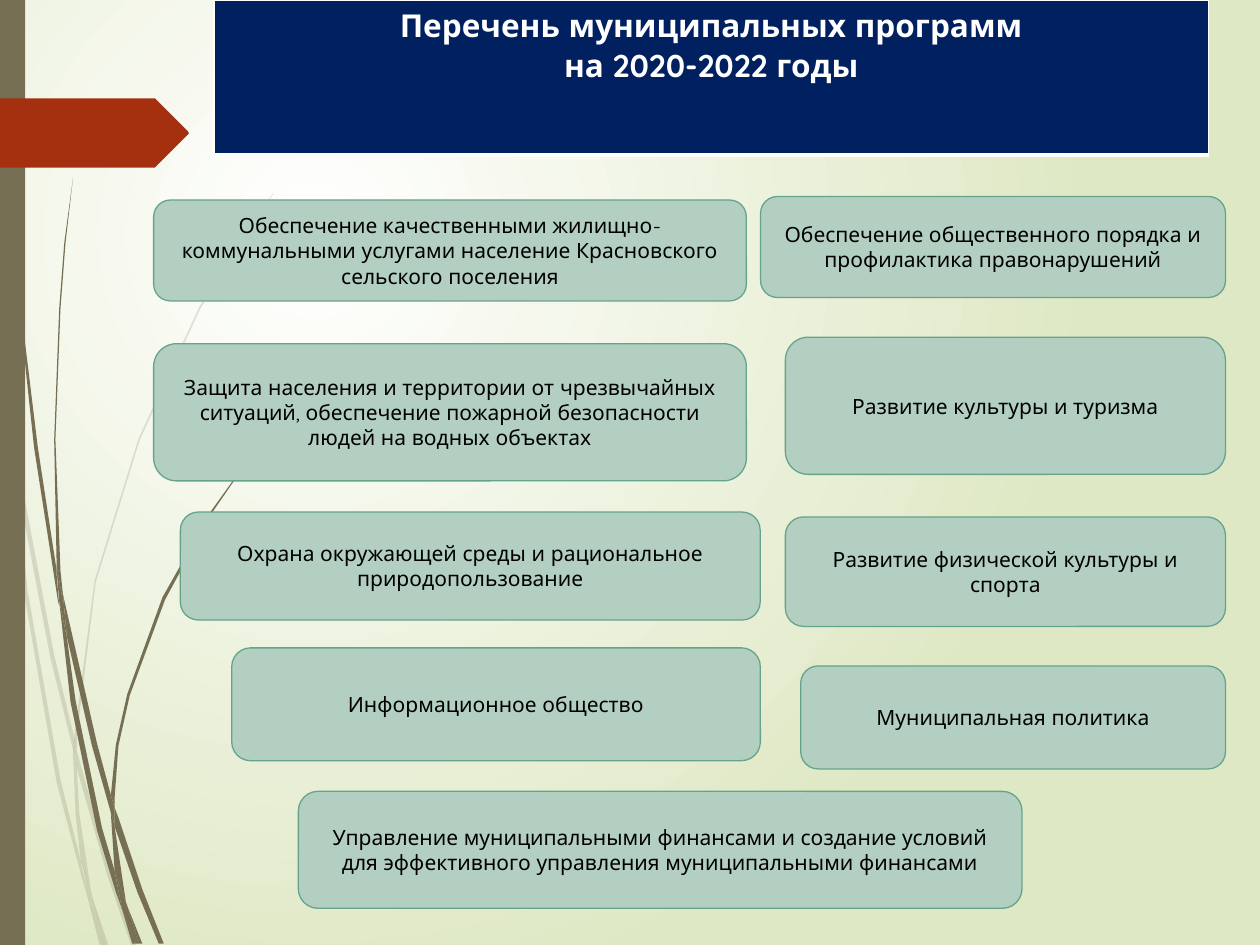
from lxml import etree
from pptx import Presentation
from pptx.dml.color import RGBColor
from pptx.enum.shapes import MSO_SHAPE
from pptx.enum.text import MSO_ANCHOR, PP_ALIGN
from pptx.oxml.ns import qn
from pptx.util import Pt

RECT, ROUND = MSO_SHAPE.RECTANGLE, MSO_SHAPE.ROUNDED_RECTANGLE
CENTER, TOP, MIDDLE = PP_ALIGN.CENTER, MSO_ANCHOR.TOP, MSO_ANCHOR.MIDDLE
WHITE = RGBColor(0xFF, 0xFF, 0xFF)
BLACK = RGBColor(0, 0, 0)
LIME = RGBColor(0xDF, 0xE8, 0xC4)
OLIVE = RGBColor(0x76, 0x6F, 0x54)
RUST = RGBColor(0xA5, 0x30, 0x10)
NAVY = RGBColor(0x00, 0x20, 0x60)
MINT = RGBColor(0xB3, 0xCF, 0xC2)
GREEN = RGBColor(0x65, 0xA4, 0x8B)
FONT = "Quicksand"
UNIT = Pt(0.72)  # outline grid: 100 steps to the inch

TITLE = ["Перечень муниципальных программ", "на 2020-2022 годы"]
HEAD = (122.4, 0, 568.1, 88.6)
BORDERS = [("a:lnL", 1), ("a:lnR", 1), ("a:lnT", 1), ("a:lnB", 3)]

# left, top, width, height, text
BOXES = [
    (87.8, 114.3, 338.7, 57.7, "Обеспечение качественными жилищно-коммунальными "
     "услугами население Красновского сельского поселения"),
    (434.6, 112.3, 265.7, 57.7, "Обеспечение общественного порядка и "
     "профилактика правонарушений"),
    (448.8, 192.7, 251.5, 78.4, "Развитие культуры и туризма"),
    (448.8, 295.4, 251.5, 62.6, "Развитие физической культуры и спорта"),
    (87.8, 196.4, 338.7, 78.4, "Защита населения и территории от чрезвычайных "
     "ситуаций, обеспечение пожарной безопасности людей на водных объектах"),
    (103.1, 292.6, 331.3, 61.7, "Охрана окружающей среды и рациональное "
     "природопользование"),
    (132.4, 370.2, 302.1, 64.5, "Информационное общество"),
    (457.6, 380.6, 242.7, 58.8, "Муниципальная политика"),
    (170.5, 452.2, 413.5, 66.8, "Управление муниципальными финансами и создание "
     "условий для эффективного управления муниципальными финансами"),
]

PALE = [
    [(8, 350), (6, 322), (0, 282), (0, 299), (7, 344)],
    [(40, 522), (59, 599), (59, 586), (43, 520), (10, 345), (12, 376)],
    [(64, 607), (61, 596), (61, 610), (85, 694), (104, 750), (108, 750), (88, 692)],
    [(83, 750), (86, 750), (73, 711)],
    [(64, 683), (48, 619), (22, 469), (12, 376), (8, 350), (19, 470), (45, 621),
     (64, 693), (70, 714), (69, 707)],
    [(58, 599), (60, 646), (64, 683), (67, 692), (73, 711), (72, 706), (63, 646),
     (61, 610), (61, 608)],
    [(61, 584), (76, 462), (111, 349), (159, 245), (187, 198), (201, 175), (217, 154),
     (217, 153), (201, 175), (186, 197), (158, 244), (110, 348), (75, 461), (59, 584),
     (59, 586), (61, 596)],
    [(70, 714), (79, 750), (82, 750)],
    [(61, 608), (61, 610), (61, 596), (59, 586), (58, 599)],
    [(67, 692), (65, 683), (69, 707), (70, 714), (82, 750), (83, 750), (73, 711)],
]
DARK = [
    [(5, 110), (14, 233), (27, 355), (46, 477), (47, 481), (45, 457), (45, 453),
     (30, 355), (15, 232), (6, 109), (4, 48), (3, 0), (2, 0), (3, 48)],
    [(73, 592), (88, 645), (88, 633), (88, 631), (77, 590), (50, 472), (53, 505)],
    [(94, 649), (91, 641), (91, 656), (109, 708), (126, 749), (130, 749), (113, 706)],
    [(91, 691), (81, 657), (60, 556), (53, 505), (47, 477), (56, 557), (77, 659),
     (92, 708), (97, 722), (96, 717)],
    [(50, 472), (48, 453), (44, 349), (48, 245), (52, 193), (58, 141), (51, 193),
     (47, 245), (43, 349), (45, 449), (49, 472)],
    [(110, 749), (113, 749), (101, 719)],
    [(47, 477), (53, 505), (50, 472), (49, 472), (45, 449), (45, 453)],
    [(91, 633), (94, 592), (103, 552), (131, 476), (169, 406), (191, 374), (203, 359),
     (216, 344), (215, 344), (203, 358), (191, 373), (168, 405), (129, 474), (101, 551),
     (92, 591), (88, 631), (91, 641)],
    [(97, 722), (105, 749), (108, 749)],
    [(88, 645), (91, 691), (96, 706), (101, 719), (100, 716), (91, 656), (90, 651)],
    [(88, 645), (90, 651), (91, 656), (91, 641), (88, 631), (88, 633)],
    [(96, 706), (91, 691), (96, 717), (97, 722), (108, 749), (110, 749), (101, 719)],
]
ARROW = [(149, 107), (124, 132), (123, 133), (0, 133), (0, 78), (123, 78), (124, 79),
         (149, 104), (150, 105.5)]


def paint(shape, fill, line=None):
    shape.shadow.inherit = False
    shape.fill.solid()
    shape.fill.fore_color.rgb = fill
    if line is None:
        shape.line.fill.background()
    else:
        shape.line.color.rgb = line
        shape.line.width = Pt(0.75)


def trace(parent, dots, fill):
    """Draw a closed outline through the given grid points."""
    pen = parent.build_freeform(*dots[0], scale=UNIT)
    pen.add_line_segments(dots[1:], close=True)
    shape = pen.convert_to_shape()
    paint(shape, fill)
    return shape


def write(par, text, size, color, bold=False):
    par.alignment = CENTER
    run = par.add_run()
    run.text = text
    font = run.font
    font.name, font.size, font.bold = FONT, Pt(size), bold
    font.color.rgb = color


def backdrop(slide):
    fill = slide.background.fill
    fill.gradient()
    for stop, color in zip(fill.gradient_stops, (WHITE, LIME)):
        stop.color.rgb = color
    grad = slide.element.find(".//" + qn("a:gradFill"))
    grad.remove(grad.find(qn("a:lin")))
    ring = etree.SubElement(grad, qn("a:path"))
    ring.set("path", "circle")
    rect = etree.SubElement(ring, qn("a:fillToRect"))
    for side, share in zip("ltrb", (50, 50, 100, 100)):
        rect.set(side, str(share * 1000))


def header(slide):
    table = slide.shapes.add_table(1, 1, *map(Pt, HEAD)).table
    table.first_row = table.horz_banding = False
    cell = table.cell(0, 0)
    cell.vertical_anchor = TOP
    frame = cell.text_frame
    for i, text in enumerate(TITLE):
        par = frame.add_paragraph() if i else frame.paragraphs[0]
        write(par, text, 18, WHITE, True)
    props = cell._tc.get_or_add_tcPr()
    for tag, width in BORDERS:
        edge = etree.SubElement(props, qn(tag), w=str(Pt(width)))
        solid = etree.SubElement(edge, qn("a:solidFill"))
        etree.SubElement(solid, qn("a:srgbClr"), val=str(WHITE))
    cell.fill.solid()
    cell.fill.fore_color.rgb = NAVY
    props.append(props.find(qn("a:solidFill")))  # fill must follow the borders


def main():
    deck = Presentation()
    deck.slide_width, deck.slide_height = Pt(720), Pt(540)
    slide = deck.slides.add_slide(deck.slide_layouts[6])
    shapes = slide.shapes
    backdrop(slide)

    for wisps, alpha in ((PALE, 20), (DARK, 100)):
        group = shapes.add_group_shape().shapes
        for dots in wisps:
            wisp = trace(group, dots, OLIVE)
            if alpha < 100:
                color = wisp.element.spPr.find(".//" + qn("a:srgbClr"))
                etree.SubElement(color, qn("a:alpha"), val=str(alpha * 1000))
    paint(shapes.add_shape(RECT, 0, 0, Pt(14.4), Pt(540)), OLIVE)
    trace(shapes, ARROW, RUST)
    header(slide)

    for *place, text in BOXES:
        box = shapes.add_shape(ROUND, *map(Pt, place))
        paint(box, MINT, GREEN)
        frame = box.text_frame
        frame.word_wrap = True
        frame.vertical_anchor = MIDDLE
        write(frame.paragraphs[0], text, 12, BLACK)
    deck.save("out.pptx")


if __name__ == "__main__":
    main()
